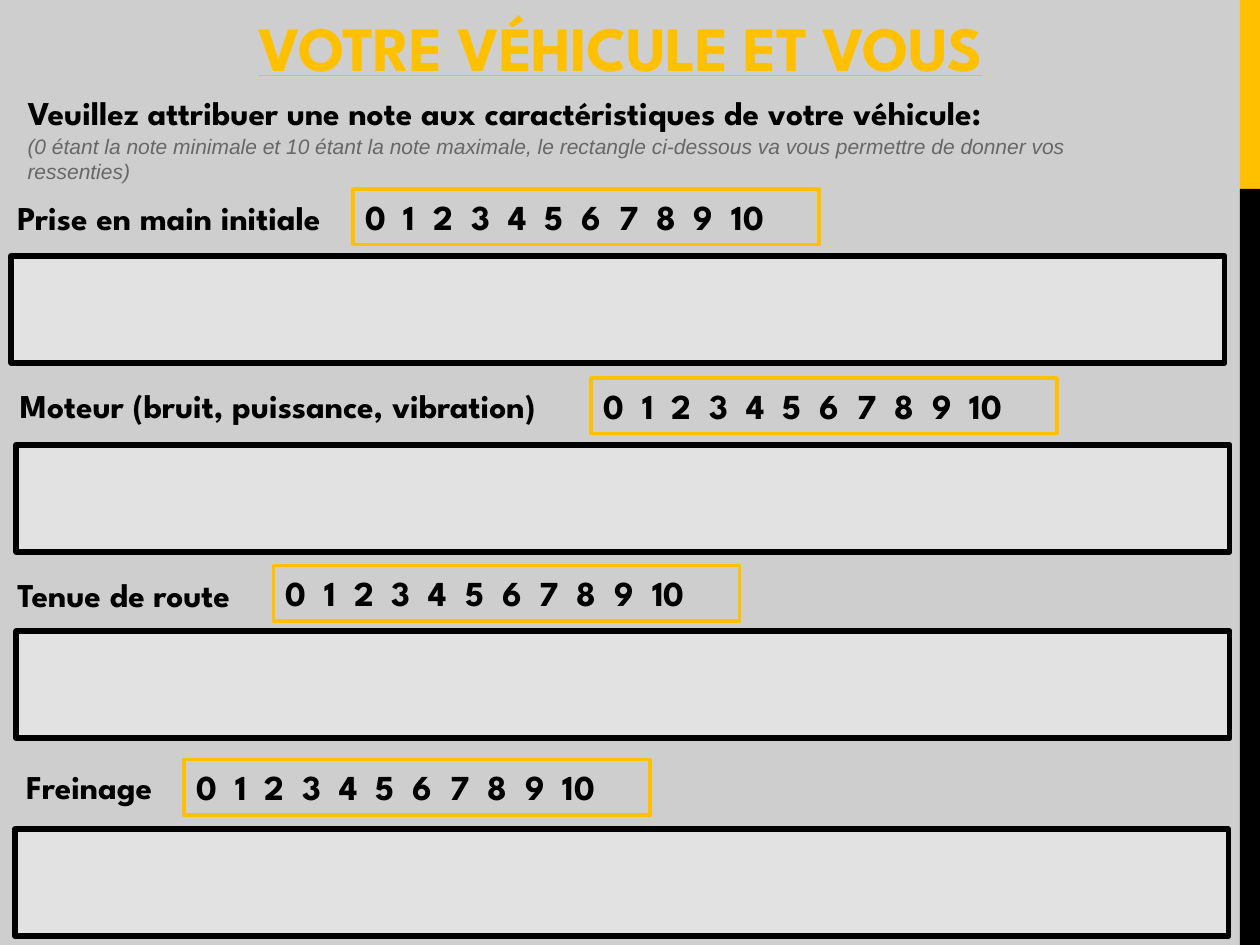
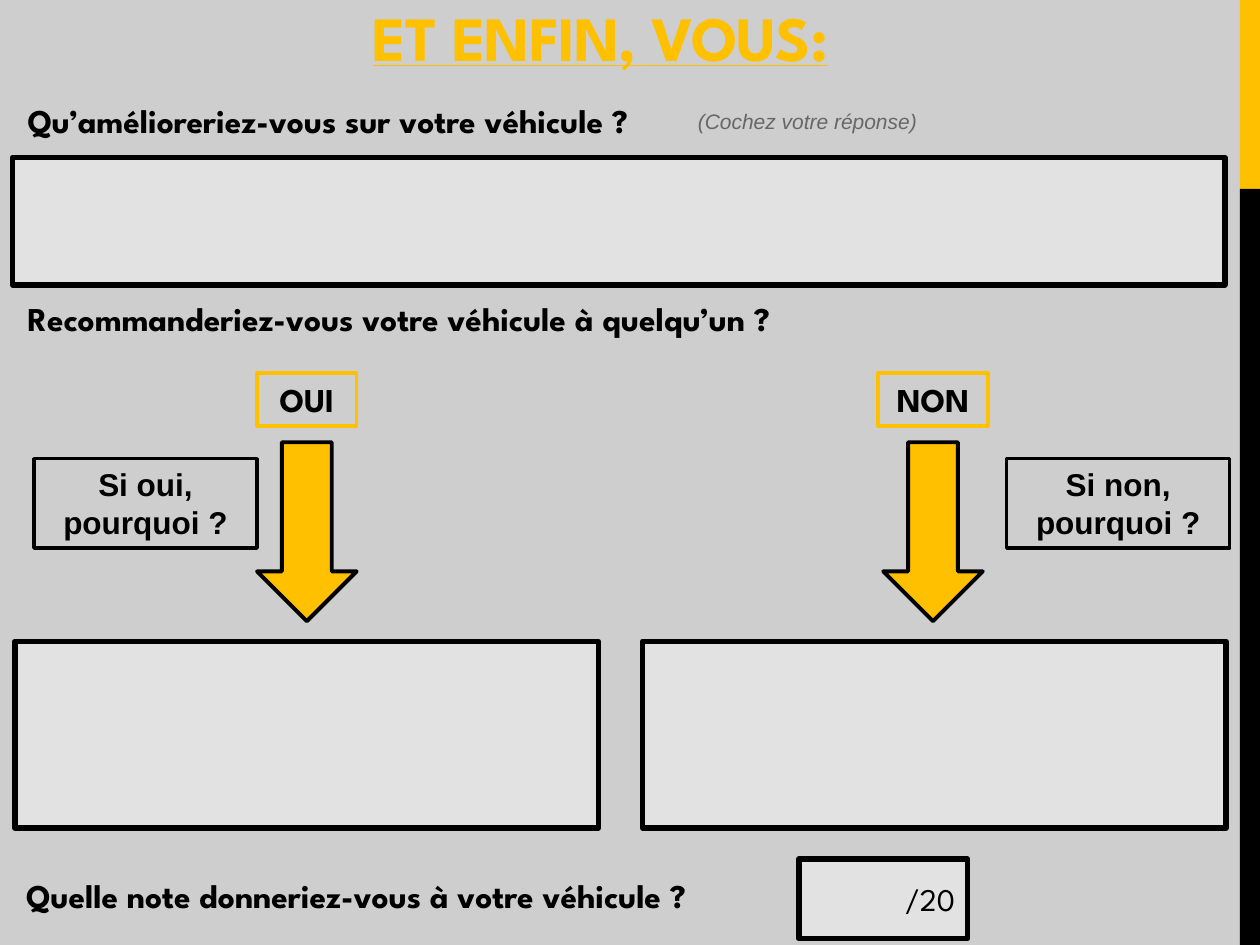
"""Builds the two survey slides about a vehicle and its driver."""
from pptx import Presentation
from pptx.dml.color import RGBColor
from pptx.enum.shapes import MSO_SHAPE
from pptx.enum.text import MSO_ANCHOR, MSO_AUTO_SIZE, PP_ALIGN
from pptx.util import Inches, Pt

RECTANGLE, DOWN_ARROW = MSO_SHAPE.RECTANGLE, MSO_SHAPE.DOWN_ARROW
LEFT, CENTER, RIGHT = PP_ALIGN.LEFT, PP_ALIGN.CENTER, PP_ALIGN.RIGHT
TOP, MIDDLE, BOTTOM = MSO_ANCHOR.TOP, MSO_ANCHOR.MIDDLE, MSO_ANCHOR.BOTTOM
GROW, FIXED = MSO_AUTO_SIZE.SHAPE_TO_FIT_TEXT, MSO_AUTO_SIZE.NONE

YELLOW = RGBColor(0xFF, 0xC0, 0x00)
BLACK = RGBColor(0x00, 0x00, 0x00)
PAGE = RGBColor(0xCE, 0xCE, 0xCE)
ANSWER = RGBColor(0xE2, 0xE2, 0xE2)
GREY = RGBColor(0x67, 0x67, 0x67)
HEADING_FONT, NOTE_FONT = "League Spartan", "Arial"

TEXT_WIDTH, LABEL_HEIGHT = 9.61, 0.42
BANDS = [(0, 1.5, YELLOW), (1.5, 6, BLACK)]

RATING_TITLE = ("VOTRE VÉHICULE ET VOUS", 0.12, -0.82)
RATING_QUESTION = "Veuillez attribuer une note aux caractéristiques de votre véhicule:"
RATING_NOTE = (
    "(0 étant la note minimale et 10 étant la note maximale, le rectangle "
    "ci-dessous va vous permettre de donner vos ressenties)"
)
MARKS = [str(mark) for mark in range(11)]
# criterion, (label left, top), (scale left, top), (answer left, top)
CRITERIA = [
    ("Prise en main initiale", (0.04, 1.52), (2.8, 1.5), (0.09, 2.03)),
    ("Moteur (bruit, puissance, vibration)", (0.06, 3.01), (4.69, 3), (0.13, 3.53)),
    ("Tenue de route", (0.04, 4.51), (2.17, 4.49), (0.13, 5.01)),
    ("Freinage", (0.11, 6.03), (1.46, 6.03), (0.12, 6.58)),
]

OPINION_TITLE = ("ET ENFIN, VOUS:", -0.04, -0.9)
QUESTIONS = [
    ("Qu’amélioreriez-vous sur votre véhicule ?", 0.12, 0.75),
    ("Recommanderiez-vous votre véhicule à quelqu’un ?", 0.12, 2.32),
    ("Quelle note donneriez-vous à votre véhicule ?", 0.11, 6.9),
]
OPINION_NOTE = "(Cochez votre réponse)"
# choice, choice width, arrow left, reason, reason left, answer left
BRANCHES = [
    ("OUI", 0.79, 2.04, "Si oui, pourquoi ?", 0.27, 0.12),
    ("NON", 0.87, 7.01, "Si non, pourquoi ?", 7.99, 5.1),
]
ARROW_WIDTH = 0.79


def write(shape, text, size=19, font=HEADING_FONT, color=BLACK, bold=True, italic=False,
          underline=False, align=LEFT, anchor=TOP, fit=GROW, tracking=None, gap=None):
    """Writes a string, or a list of words set apart by widened spaces."""
    frame = shape.text_frame
    frame.word_wrap = True
    frame.auto_size = fit
    frame.vertical_anchor = anchor
    paragraph = frame.paragraphs[0]
    paragraph.alignment = align
    words = [text] if isinstance(text, str) else text
    for position, word in enumerate(words):
        pieces = [(word, tracking)] if position == 0 else [(" ", gap), (word, tracking)]
        for piece, spacing in pieces:
            run = paragraph.add_run()
            run.text = piece
            run.font.name = font
            run.font.size = Pt(size)
            run.font.bold = bold
            run.font.italic = italic
            run.font.underline = underline
            run.font.color.rgb = color
            if spacing is not None:
                run.font._element.set("spc", str(spacing))


def add_label(slide, text, left, top, width=TEXT_WIDTH, height=LABEL_HEIGHT, **style):
    """Adds a text box with the given text."""
    label = slide.shapes.add_textbox(Inches(left), Inches(top), Inches(width), Inches(height))
    write(label, text, **style)


def add_box(slide, left, top, width, height, fill=None, line=None, weight=2, kind=RECTANGLE):
    """Adds a flat preset shape."""
    box = slide.shapes.add_shape(kind, Inches(left), Inches(top), Inches(width), Inches(height))
    box.shadow.inherit = False
    if fill is None:
        box.fill.background()
    else:
        box.fill.solid()
        box.fill.fore_color.rgb = fill
    if line is None:
        box.line.fill.background()
    else:
        box.line.color.rgb = line
        box.line.width = Pt(weight)
    return box


def add_answer(slide, left, top, width=9.63, height=0.85):
    """Adds a field in which an answer is written."""
    return add_box(slide, left, top, width, height, fill=ANSWER, line=BLACK, weight=3.25)


def add_page(deck, layout, title, left, top):
    """Adds a slide with its title."""
    slide = deck.slides.add_slide(layout)
    heading = slide.shapes.title
    heading.left, heading.top = Inches(left), Inches(top)
    heading.width, heading.height = Inches(TEXT_WIDTH), Inches(1.54)
    write(heading, title, size=36, color=YELLOW, underline=True, align=CENTER,
          anchor=BOTTOM, fit=FIXED, tracking=-60)
    return slide


def move_bands_to_layout(slide, layout):
    """Draws the side bands and hands them to the shared layout."""
    for number, (top, height, color) in enumerate(BANDS):
        band = add_box(slide, 9.84, top, 0.16, height, fill=color)
        band.element.nvSpPr.cNvPr.id = 20 + number
        layout.shapes.element.append(band.element)


def fill_rating(slide):
    """Fills the slide on which each criterion gets a mark."""
    add_label(slide, RATING_QUESTION, 0.12, 0.68)
    add_label(slide, RATING_NOTE, 0.12, 1.01, 8.45, 0.5,
              size=12, font=NOTE_FONT, color=GREY, bold=False, italic=True)
    for criterion, label_at, scale_at, answer_at in CRITERIA:
        add_label(slide, criterion, *label_at)
        scale = add_box(slide, *scale_at, 3.7, 0.44, line=YELLOW)
        write(scale, MARKS, size=20, gap=500)
        add_answer(slide, *answer_at)


def fill_opinion(slide):
    """Fills the slide of open questions."""
    for question, left, top in QUESTIONS:
        add_label(slide, question, left, top)
    add_label(slide, OPINION_NOTE, 5.44, 0.81, 2.63, 0.3,
              size=12, font=NOTE_FONT, color=GREY, bold=False, italic=True)
    add_answer(slide, 0.1, 1.25, 9.62, 1.01)
    for choice, width, arrow_left, reason, reason_left, answer_left in BRANCHES:
        choice_left = arrow_left + (ARROW_WIDTH - width) / 2
        choice_box = add_box(slide, choice_left, 2.96, width, LABEL_HEIGHT, line=YELLOW)
        write(choice_box, choice, align=CENTER)
        add_box(slide, arrow_left, 3.51, ARROW_WIDTH, 1.42,
                fill=YELLOW, line=BLACK, weight=2.25, kind=DOWN_ARROW)
        reason_box = add_box(slide, reason_left, 3.64, 1.77, 0.71, line=BLACK)
        write(reason_box, reason, size=18, font=NOTE_FONT, align=CENTER)
        add_answer(slide, answer_left, 5.09, 4.63, 1.48)
    mark = add_answer(slide, 6.34, 6.82, 1.34, 0.63)
    write(mark, "/20", size=18, bold=False, align=RIGHT, anchor=MIDDLE, fit=FIXED)


def main():
    """Builds and saves the deck."""
    deck = Presentation()
    deck.slide_width, deck.slide_height = Inches(10), Inches(7.5)
    background = deck.slide_master.background.fill
    background.solid()
    background.fore_color.rgb = PAGE
    layout = deck.slide_layouts.get_by_name("Title Only")
    rating = add_page(deck, layout, *RATING_TITLE)
    move_bands_to_layout(rating, layout)
    fill_rating(rating)
    fill_opinion(add_page(deck, layout, *OPINION_TITLE))
    deck.save("out.pptx")


if __name__ == "__main__":
    main()
